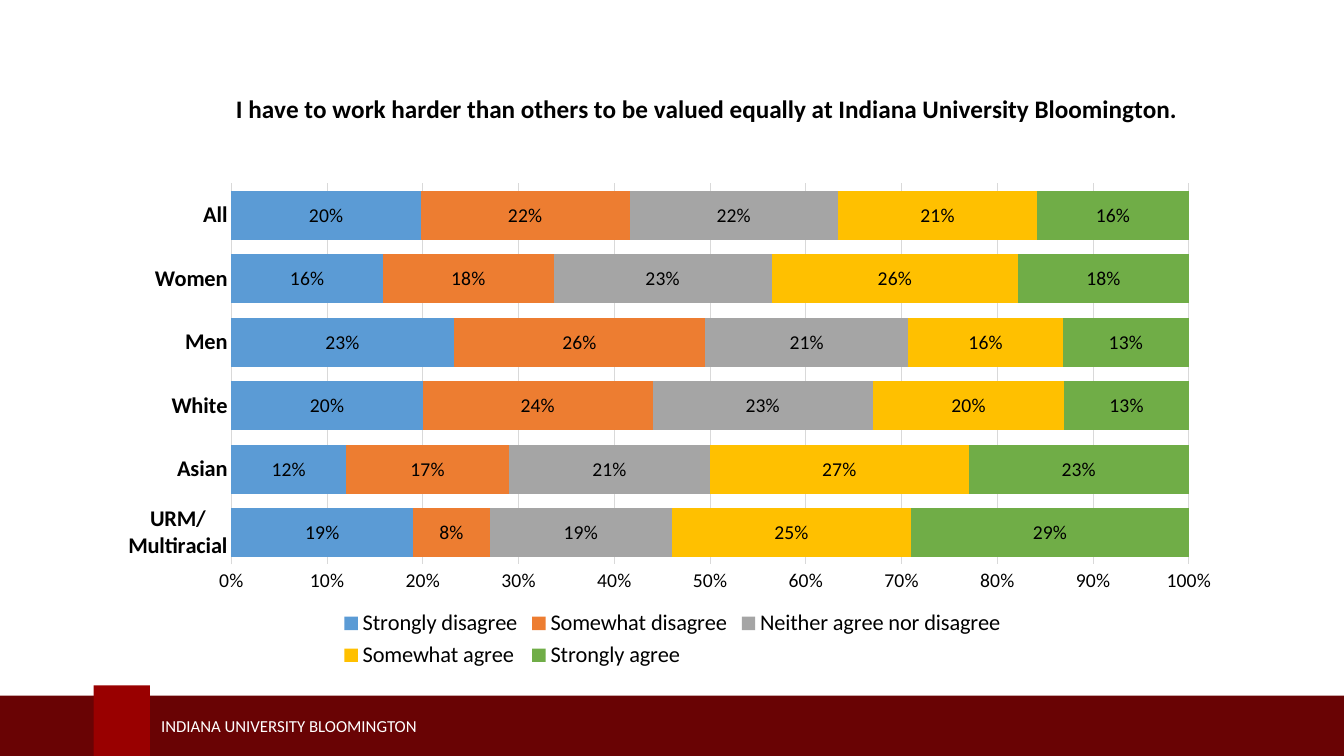
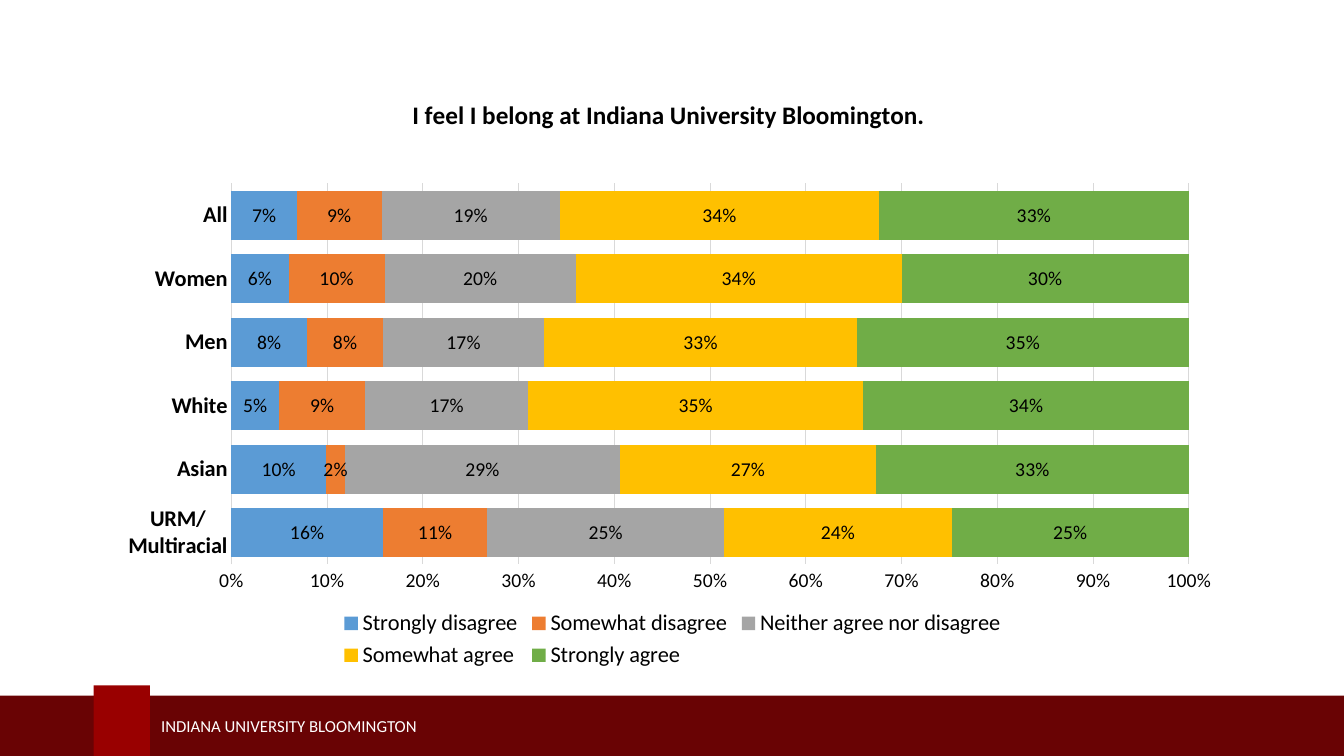
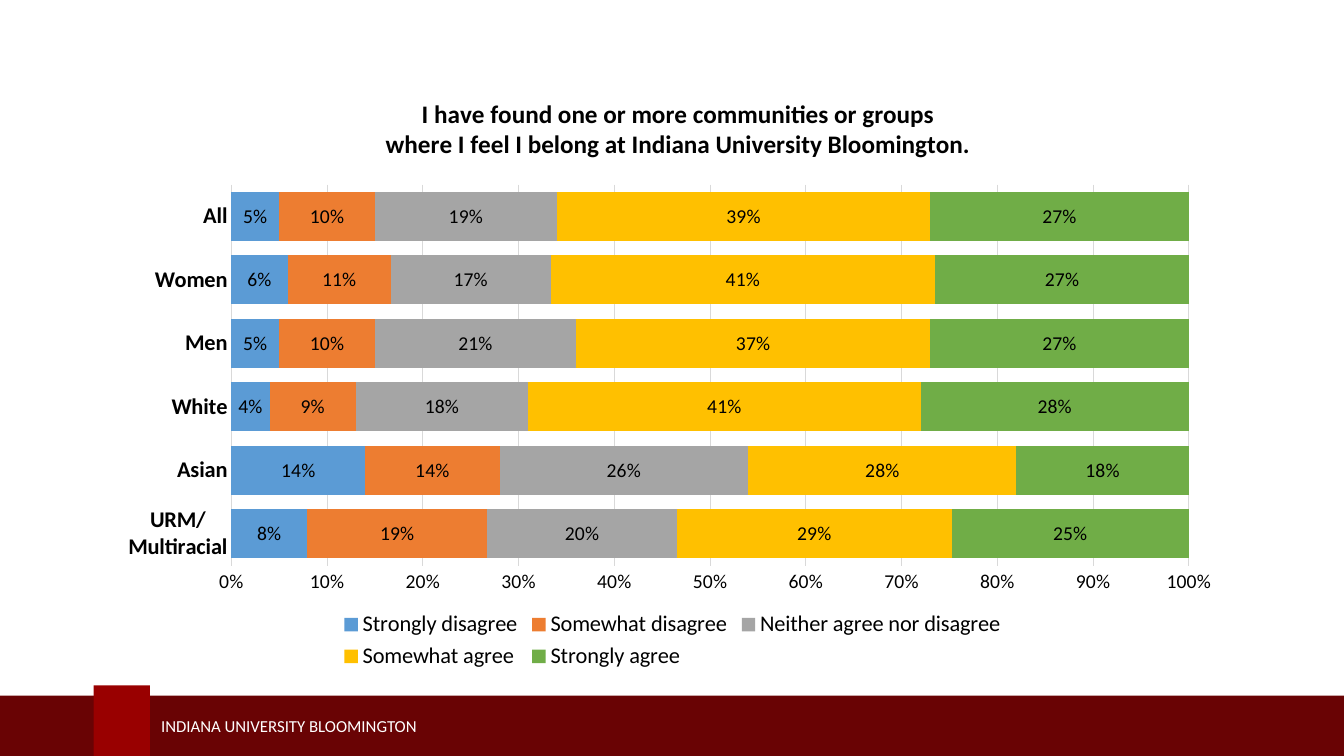
from pptx import Presentation
from pptx.chart.data import CategoryChartData
from pptx.dml.color import RGBColor
from pptx.enum.chart import XL_CHART_TYPE, XL_LABEL_POSITION, XL_LEGEND_POSITION, XL_TICK_MARK
from pptx.enum.shapes import MSO_SHAPE
from pptx.enum.text import MSO_ANCHOR
from pptx.oxml import parse_xml
from pptx.oxml.ns import nsdecls, qn
from pptx.util import Cm, Pt

STACKED_BARS = XL_CHART_TYPE.BAR_STACKED_100
LABEL_CENTER = XL_LABEL_POSITION.CENTER
LEGEND_BOTTOM = XL_LEGEND_POSITION.BOTTOM
NO_TICKS = XL_TICK_MARK.NONE
RECTANGLE = MSO_SHAPE.RECTANGLE
MIDDLE = MSO_ANCHOR.MIDDLE

FONT = "Calibri"
BLACK = RGBColor(0x00, 0x00, 0x00)
WHITE = RGBColor(0xFF, 0xFF, 0xFF)
GRID_GRAY = RGBColor(0xD9, 0xD9, 0xD9)
DARK_RED = RGBColor(0x69, 0x03, 0x04)
CRIMSON = RGBColor(0x99, 0x00, 0x00)

GROUPS = ["URM/\nMultiracial", "Asian", "White", "Men", "Women", "All"]
ANSWERS = [
    ("Strongly disagree", RGBColor(0x5B, 0x9B, 0xD5)),
    ("Somewhat disagree", RGBColor(0xED, 0x7D, 0x31)),
    ("Neither agree nor disagree", RGBColor(0xA5, 0xA5, 0xA5)),
    ("Somewhat agree", RGBColor(0xFF, 0xC0, 0x00)),
    ("Strongly agree", RGBColor(0x70, 0xAD, 0x47)),
]

# Question, its left and top as shares of the chart, chart top in cm,
# and one row of shares per answer, in the order of GROUPS.
SURVEY = [
    ("I have to work harder than others to be valued equally at Indiana University Bloomington.",
     (0.15, 0.03), 1.73,
     [(0.19, 0.12, 0.20, 0.23, 0.16, 0.20),
      (0.08, 0.17, 0.24, 0.26, 0.18, 0.22),
      (0.19, 0.21, 0.23, 0.21, 0.23, 0.22),
      (0.25, 0.27, 0.20, 0.16, 0.26, 0.21),
      (0.29, 0.23, 0.13, 0.13, 0.18, 0.16)]),
    ("I feel I belong at Indiana University Bloomington.",
     (0.29, 0.04), 1.73,
     [(0.16, 0.10, 0.05, 0.08, 0.06, 0.07),
      (0.11, 0.02, 0.09, 0.08, 0.10, 0.09),
      (0.25, 0.29, 0.17, 0.17, 0.20, 0.19),
      (0.24, 0.27, 0.35, 0.33, 0.34, 0.34),
      (0.25, 0.33, 0.34, 0.35, 0.30, 0.33)]),
    ("I have found one or more communities or groups\n"
     "where I feel I belong at Indiana University Bloomington.",
     (0.27, 0.04), 1.76,
     [(0.08, 0.14, 0.04, 0.05, 0.06, 0.05),
      (0.19, 0.14, 0.09, 0.10, 0.11, 0.10),
      (0.20, 0.26, 0.18, 0.21, 0.17, 0.19),
      (0.29, 0.28, 0.41, 0.37, 0.41, 0.39),
      (0.25, 0.18, 0.28, 0.27, 0.27, 0.27)]),
]


def style_font(font, size, color=BLACK, bold=False):
    font.name = FONT
    font.size = Pt(size)
    font.bold = bold
    font.color.rgb = color


def add_block(slide, left, top, width, height, color):
    block = slide.shapes.add_shape(RECTANGLE, Cm(left), Cm(top), Cm(width), Cm(height))
    block.shadow.inherit = False
    block.fill.solid()
    block.fill.fore_color.rgb = color
    block.line.fill.background()
    return block


def add_footer_text(slide):
    box = slide.shapes.add_textbox(Cm(3.81), Cm(17.91), Cm(13.39), Cm(0.76))
    frame = box.text_frame
    frame.word_wrap = True
    frame.vertical_anchor = MIDDLE
    frame.text = "INDIANA UNIVERSITY BLOOMINGTON"
    style_font(frame.paragraphs[0].font, 12, WHITE)
    return box


def move_footer_to_layout(slide):
    """Draw the footer and hand it to the layout, so that every slide shows it."""
    layout = slide.slide_layout
    for placeholder in list(layout.placeholders):
        layout.shapes.element.remove(placeholder.element)
    footer = [
        add_block(slide, -0.1, 17.53, 34.19, 1.68, DARK_RED),
        add_block(slide, 2.36, 17.27, 1.42, 1.96, CRIMSON),
        add_footer_text(slide),
    ]
    for shape in footer:
        layout.shapes.element.append(shape.element)


def set_layout(parent, index, inner=False, **shares):
    """Place a chart part by shares (x, y, w, h) of the chart area."""
    for old_layout in parent.findall(qn("c:layout")):
        parent.remove(old_layout)
    target = '<c:layoutTarget val="inner"/>' if inner else ""
    modes = "".join(f'<c:{key}Mode val="edge"/>' for key in shares if key in "xy")
    values = "".join(f'<c:{key} val="{share}"/>' for key, share in shares.items())
    parent.insert(index, parse_xml(
        f'<c:layout {nsdecls("c")}><c:manualLayout>{target}{modes}{values}'
        "</c:manualLayout></c:layout>"))


def style_title(chart, question, position):
    title = chart.chart_title
    title.text_frame.text = question
    for paragraph in title.text_frame.paragraphs:
        style_font(paragraph.font, 18, bold=True)
    left, top = position
    set_layout(title._element, 1, x=left, y=top)


def style_axes(chart):
    groups, shares = chart.category_axis, chart.value_axis
    for axis in (groups, shares):
        axis.major_tick_mark = axis.minor_tick_mark = NO_TICKS
    style_font(groups.tick_labels.font, 16, bold=True)
    style_font(shares.tick_labels.font, 14)
    shares.tick_labels.number_format = "0%"
    shares.tick_labels.number_format_is_linked = False
    shares.format.line.fill.background()
    for line in (groups.format.line, shares.major_gridlines.format.line):
        line.color.rgb = GRID_GRAY
        line.width = Pt(0.75)


def style_bars(plot):
    plot.gap_width = 30
    plot.overlap = 100
    plot.vary_by_categories = False
    for series, (_, color) in zip(plot.series, ANSWERS):
        series.format.fill.solid()
        series.format.fill.fore_color.rgb = color
        labels = series.data_labels
        labels.show_value = True
        labels.position = LABEL_CENTER
        labels.number_format = "0%"
        labels.number_format_is_linked = False
        style_font(labels.font, 14)


def add_survey_chart(slide, question, title_position, top, rows):
    data = CategoryChartData(number_format="0%")
    data.categories = GROUPS
    for (answer, _), shares in zip(ANSWERS, rows):
        data.add_series(answer, shares)
    chart = slide.shapes.add_chart(
        STACKED_BARS, Cm(1.07), Cm(top), Cm(31.75), Cm(15.24), data).chart
    style_font(chart.font, 10)
    style_title(chart, question, title_position)
    style_axes(chart)
    style_bars(chart.plots[0])
    chart.has_legend = True
    chart.legend.position = LEGEND_BOTTOM
    chart.legend.include_in_layout = False
    style_font(chart.legend.font, 16)
    plot_area = chart._chartSpace.chart.plotArea
    set_layout(plot_area, 0, inner=True, x=0.15, y=0.19, w=0.76, h=0.63)


def main():
    presentation = Presentation()
    presentation.slide_width = Cm(33.87)
    presentation.slide_height = Cm(19.05)
    blank_layout = presentation.slide_layouts[6]
    slides = [presentation.slides.add_slide(blank_layout) for _ in SURVEY]
    move_footer_to_layout(slides[0])
    for slide, survey_item in zip(slides, SURVEY):
        add_survey_chart(slide, *survey_item)
    presentation.save("out.pptx")


if __name__ == "__main__":
    main()
